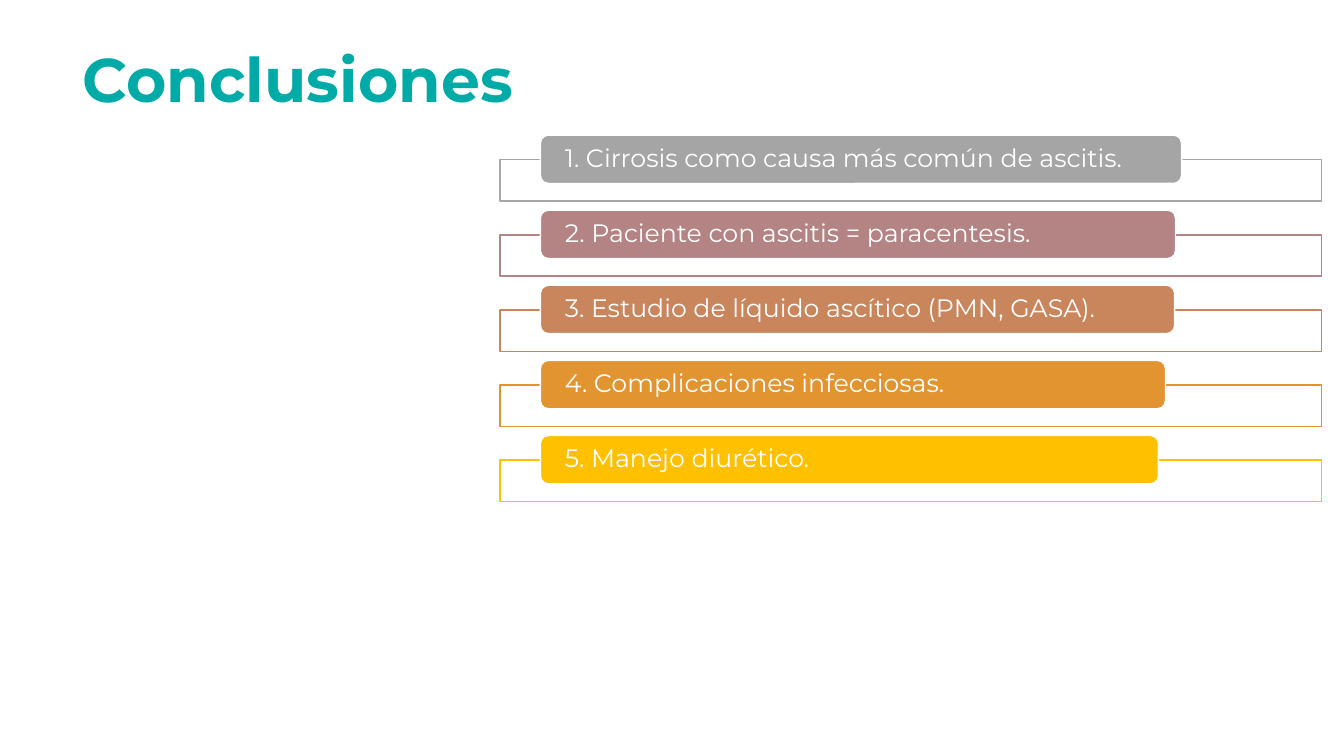
from lxml import etree
from pptx import Presentation
from pptx import util as u
from pptx.dml.color import RGBColor
from pptx.enum import shapes, text
from pptx.oxml.ns import qn

COLORS = {
    "white": "FFFFFF",
    "teal": "00AAA7",
    "gray": "A5A5A5",
    "mauve": "B48383",
    "copper": "C9855C",
    "orange": "E19430",
    "gold": "FFC000",
}
CONCLUSIONS = [
    ("1. Cirrosis como causa más común de ascitis.", "gray", 6.36),
    ("2. Paciente con ascitis = paracentesis.", "mauve", 6.3),
    ("3. Estudio de líquido ascítico (PMN, GASA).", "copper", 6.29),
    ("4. Complicaciones infecciosas.", "orange", 6.2),
    ("5. Manejo diurético.", "gold", 6.13),
]
FIRST_TOP = 1.34
ROW_STEP = 0.745


def color(name):
    """Return the named colour of the palette."""
    return RGBColor.from_string(COLORS[name])


def write(frame, content, size=18, tint="white", bold=False, spacing=None):
    """Put one formatted paragraph in a text frame."""
    para = frame.paragraphs[0]
    para.alignment = text.PP_ALIGN.LEFT
    para.line_spacing = spacing
    span = para.add_run()
    span.text = content
    span.font.name = "Montserrat"
    span.font.size = u.Pt(size)
    span.font.bold = bold
    span.font.color.rgb = color(tint)


class ConclusionsPage:
    """Hold the slide and draw its elements in one style."""

    def __init__(self, deck):
        """Add a blank page to the deck."""
        self.page = deck.slides.add_slide(deck.slide_layouts[6])

    def shape(self, kind, left, top, width, height, fill, line):
        """Draw a filled and outlined preset shape."""
        box = self.page.shapes.add_shape(
            kind, u.Inches(left), u.Inches(top), u.Inches(width), u.Inches(height))
        box.shadow.inherit = False
        box.fill.solid()
        box.fill.fore_color.rgb = color(fill)
        box.line.color.rgb = color(line)
        box.line.width = u.Pt(1)
        return box

    def frame(self, top, tint):
        """Draw the translucent outlined frame behind a bar."""
        box = self.shape(shapes.MSO_SHAPE.RECTANGLE, 4.96, top, 8.15, 0.41, "white", tint)
        fill = box.fill._xPr.find(qn("a:solidFill"))
        etree.SubElement(fill[0], qn("a:alpha"), val="90000")

    def bar(self, content, top, width, tint):
        """Draw a rounded bar with its conclusion."""
        box = self.shape(
            shapes.MSO_SHAPE.ROUNDED_RECTANGLE, 5.36, top, width, 0.48, tint, "white")
        frame = box.text_frame
        frame.word_wrap = True
        frame.vertical_anchor = text.MSO_ANCHOR.MIDDLE
        frame.margin_left = frame.margin_right = u.Inches(0.22)
        frame.margin_top = frame.margin_bottom = 0
        write(frame, content, spacing=0.9)

    def title(self, content):
        """Write the heading of the page."""
        box = self.page.shapes.add_textbox(
            u.Inches(0.72), u.Inches(0.36), u.Inches(4.52), u.Inches(0.84))
        box.text_frame.word_wrap = False
        box.text_frame.auto_size = text.MSO_AUTO_SIZE.SHAPE_TO_FIT_TEXT
        write(box.text_frame, content, size=44, tint="teal", bold=True)


def main():
    """Build and save the conclusions deck."""
    deck = Presentation()
    deck.slide_width = u.Inches(13.33)
    deck.slide_height = u.Inches(7.5)
    page = ConclusionsPage(deck)
    for row, (content, tint, width) in enumerate(CONCLUSIONS):
        top = FIRST_TOP + row * ROW_STEP
        page.frame(top + 0.245, tint)
        page.bar(content, top, width, tint)
    page.title("Conclusiones")
    deck.save("out.pptx")


if __name__ == "__main__":
    main()
